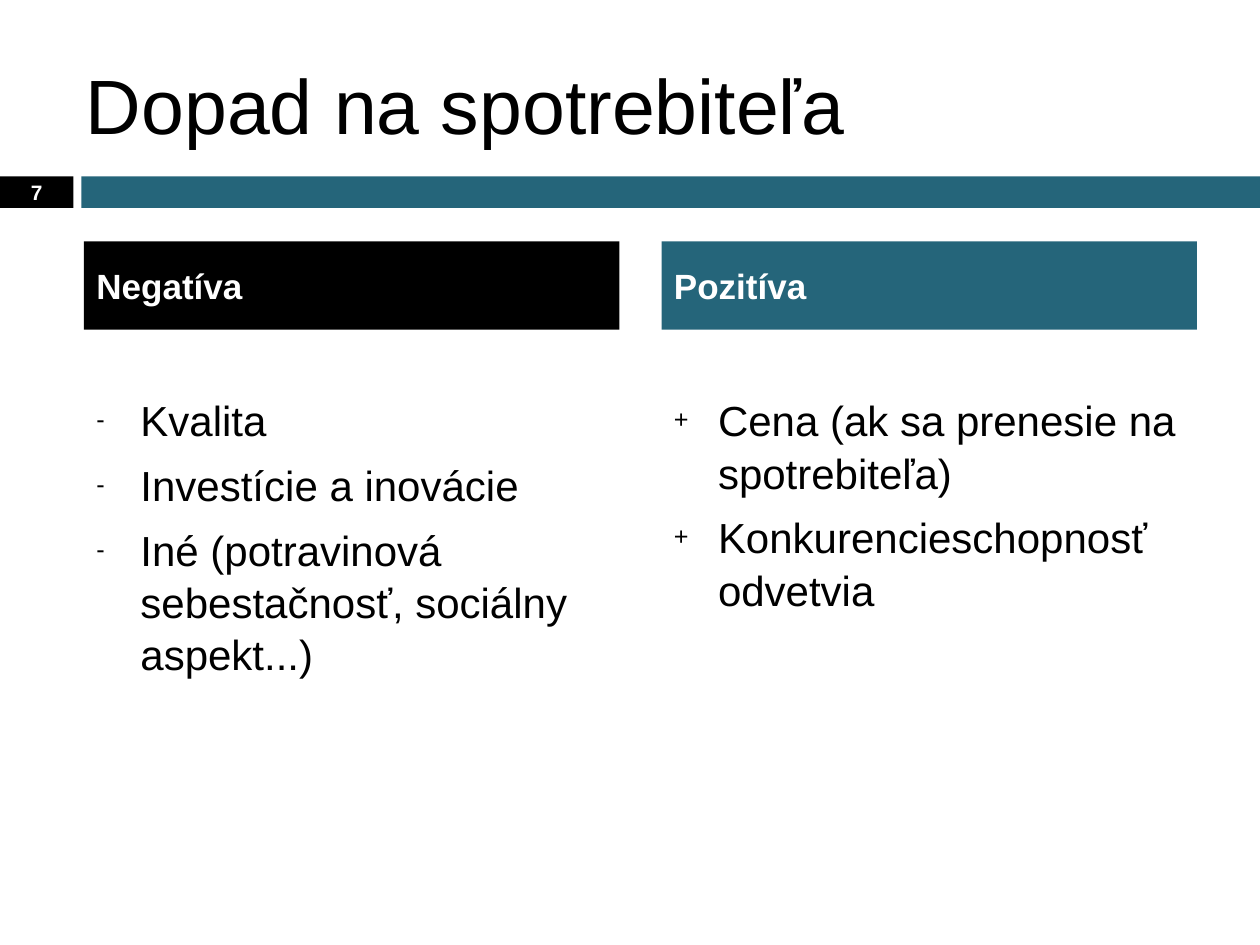
from lxml.etree import SubElement
from pptx import Presentation
from pptx.dml.color import RGBColor
from pptx.enum.shapes import MSO_SHAPE as Shape
from pptx.enum.text import MSO_ANCHOR as Anchor, PP_ALIGN as Align
from pptx.oxml.ns import qn
from pptx.util import Pt

BLACK = RGBColor(0x00, 0x00, 0x00)
WHITE = RGBColor(0xFF, 0xFF, 0xFF)
TEAL = RGBColor(0x25, 0x65, 0x7A)

deck = Presentation()
deck.slide_width, deck.slide_height = Pt(720), Pt(540)
page = deck.slides.add_slide(deck.slide_layouts[6])


def add_box(left, top, width, height, fill=None):
    area = Pt(left), Pt(top), Pt(width), Pt(height)
    if fill is None:
        box = page.shapes.add_textbox(*area)
    else:
        box = page.shapes.add_shape(Shape.RECTANGLE, *area)
        box.shadow.inherit = False
        box.fill.solid()
        box.fill.fore_color.rgb = fill
        box.line.fill.background()
    box.text_frame.word_wrap = True
    box.text_frame.vertical_anchor = Anchor.TOP if fill is None else Anchor.MIDDLE
    return box


def write(para, text, size, color, bold=False, align=Align.LEFT):
    para.text = text
    para.alignment = align
    para.font.name = "Arial"
    para.font.size = Pt(size)
    para.font.bold = bold
    para.font.color.rgb = color


number = add_box(0, 100.8, 42, 18, BLACK)
write(number.text_frame.paragraphs[0], "7", 11.9, WHITE, True, Align.CENTER)
add_box(46.5, 100.8, 673.5, 18, TEAL)

title = add_box(42, 25, 642, 68)
title.text_frame.vertical_anchor = Anchor.MIDDLE
write(title.text_frame.paragraphs[0], "Dopad na spotrebiteľa", 44, BLACK)

columns = [
    (48, "Negatíva", BLACK, "-",
     ["Kvalita", "Investície a inovácie",
      "Iné (potravinová sebestačnosť, sociálny aspekt...)"]),
    (378, "Pozitíva", TEAL, "+",
     ["Cena (ak sa prenesie na spotrebiteľa)",
      "Konkurencieschopnosť odvetvia"]),
]
for left, heading, fill, bullet, items in columns:
    header = add_box(left, 138, 306, 50.4, fill)
    write(header.text_frame.paragraphs[0], heading, 20, WHITE, True)

    frame = add_box(left, 221, 306, 253).text_frame
    for index, item in enumerate(items):
        para = frame.add_paragraph() if index else frame.paragraphs[0]
        para.line_spacing = 1.04
        if index:
            para.space_before = Pt(7)
        props = para._p.get_or_add_pPr()
        props.set("marL", str(Pt(25.2)))
        props.set("indent", str(-Pt(25.2)))
        color = SubElement(props, qn("a:buClr"))
        SubElement(color, qn("a:srgbClr"), val=str(BLACK))
        SubElement(props, qn("a:buSzPct"), val="60000")
        SubElement(props, qn("a:buFont"), typeface="Arial")
        SubElement(props, qn("a:buChar"), char=bullet)
        write(para, item, 24, BLACK)

deck.save("out.pptx")
